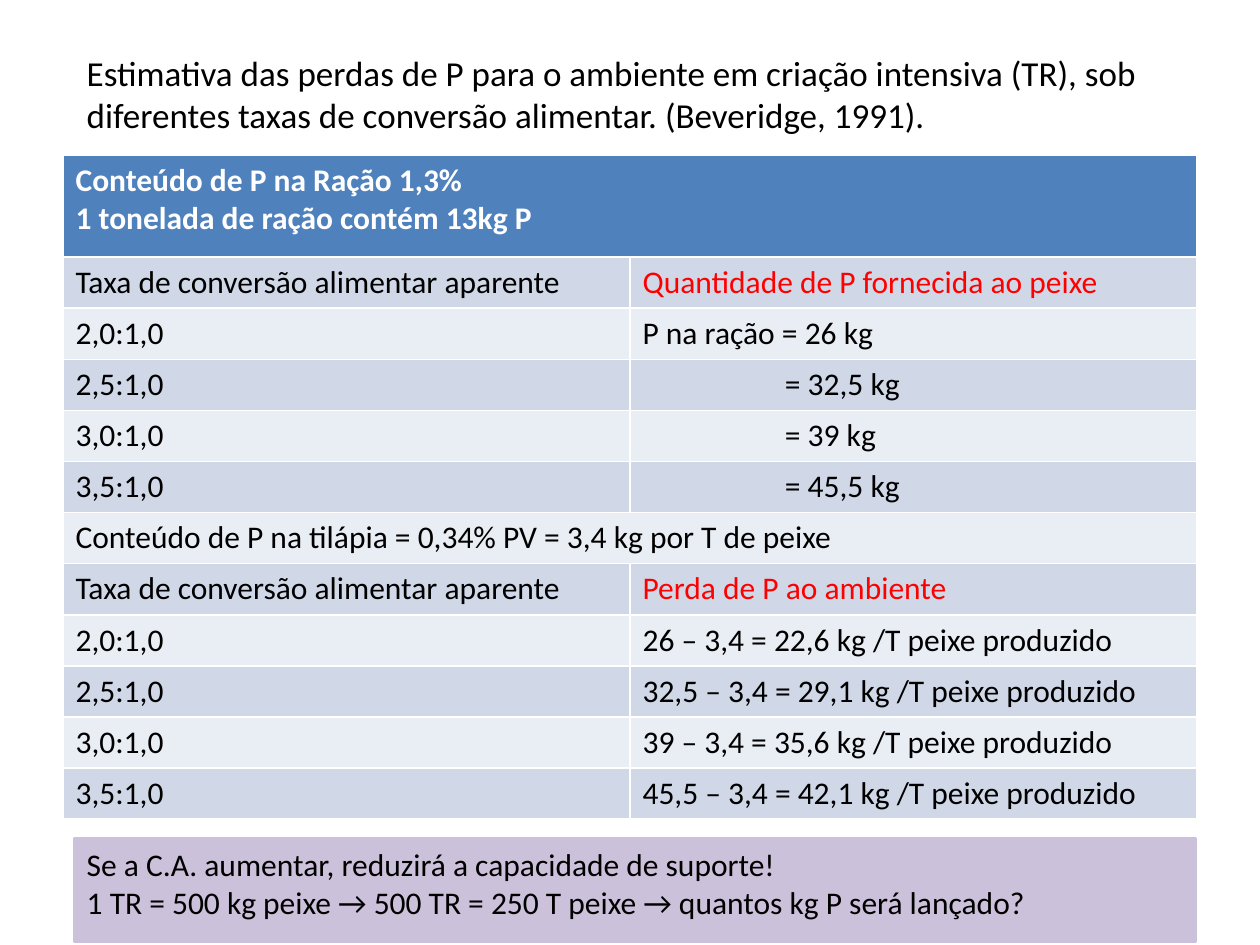
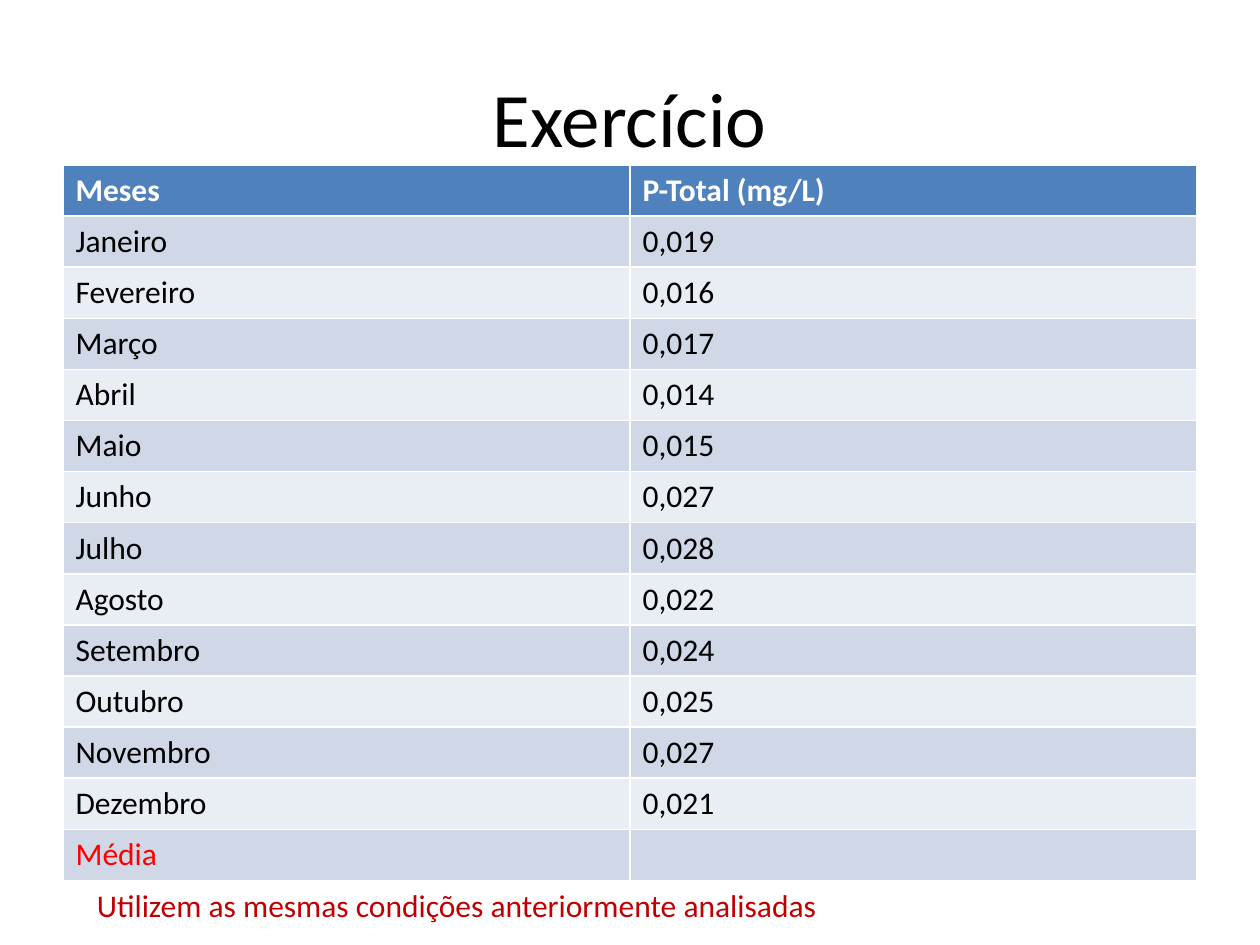
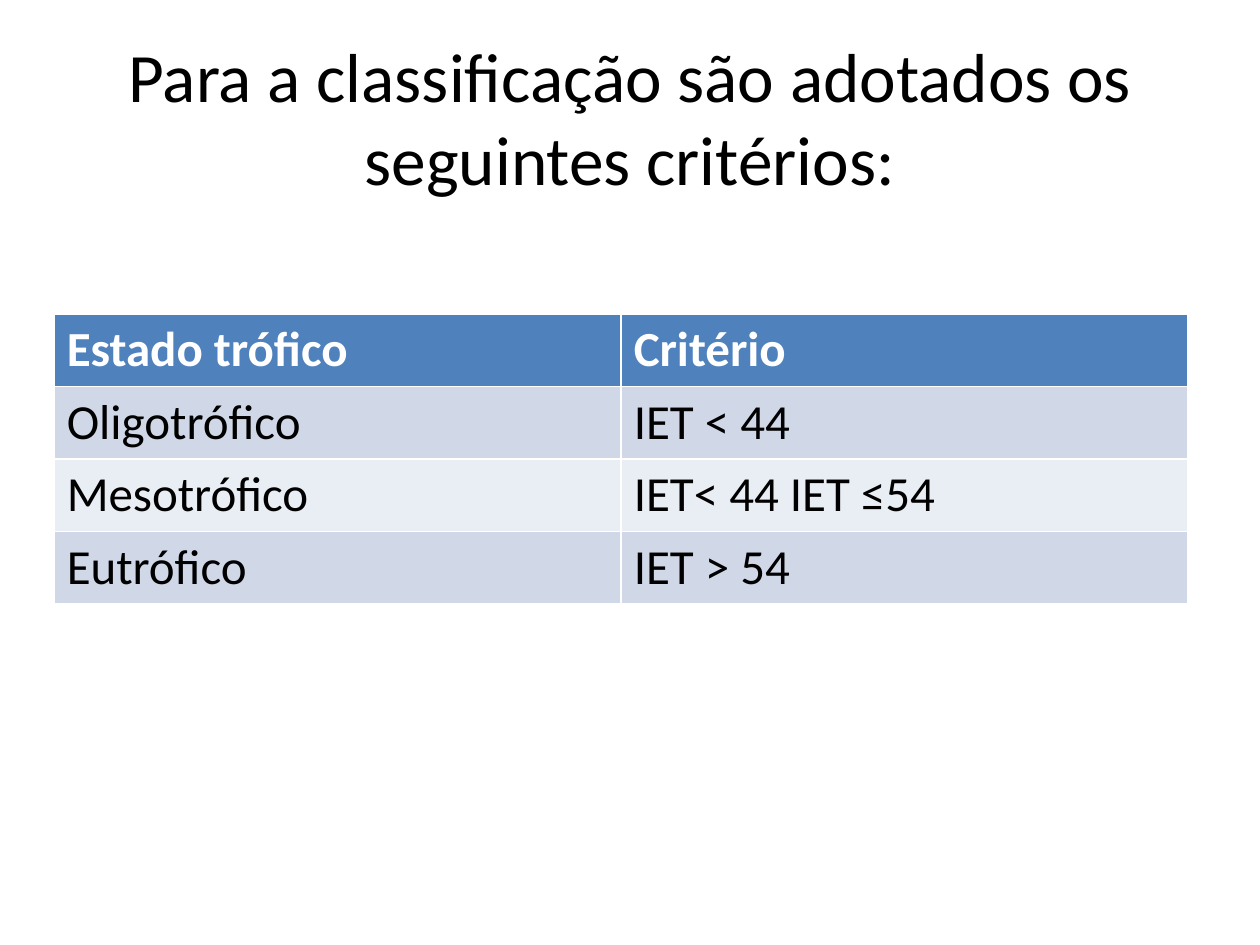
from pptx import Presentation
from pptx.dml.color import RGBColor
from pptx.enum.shapes import MSO_SHAPE
from pptx.enum.text import MSO_ANCHOR, PP_ALIGN
from pptx.util import Inches, Pt

RECTANGLE = MSO_SHAPE.RECTANGLE
TOP, MIDDLE = MSO_ANCHOR.TOP, MSO_ANCHOR.MIDDLE
LEFT, CENTER = PP_ALIGN.LEFT, PP_ALIGN.CENTER

# Shared style
FONT = "Calibri"
BLACK, WHITE, RED, DARK_RED = "000000", "FFFFFF", "FF0000", "C00000"
HEADER, BANDS, LILAC = "4F81BD", ("D0D8E8", "E9EDF4"), "CCC1DA"
TITLE_ONLY, BLANK = 5, 6
SLIDE_W, SLIDE_H = 10, 7.5
TABLE_W = 0.9 * SLIDE_W
TITLE_BOX = (0.5, 0.3, TABLE_W, 1.25)
CELL_MARGIN, EQUALS_INDENT = 0.1, 1.13

# Slide 1: phosphorus losses; a one-item row spans the whole table
LOSSES_INTRO = ("Estimativa das perdas de P para o ambiente em criação intensiva (TR), "
                "sob diferentes taxas de conversão alimentar. (Beveridge, 1991).")
RATE_LABEL = "Taxa de conversão alimentar aparente"
RATES = ("2,0:1,0", "2,5:1,0", "3,0:1,0", "3,5:1,0")
SUPPLIED_LABEL, LOST_LABEL = "Quantidade de P fornecida ao peixe", "Perda de P ao ambiente"
SUPPLIED = ("P na ração = 26 kg", "= 32,5 kg", "= 39 kg", "= 45,5 kg")
LOST = ("26 – 3,4 = 22,6", "32,5 – 3,4 = 29,1", "39 – 3,4 = 35,6", "45,5 – 3,4 = 42,1")
LOSSES = [
    ("Conteúdo de P na Ração 1,3%\n1 tonelada de ração contém 13kg P",),
    (RATE_LABEL, SUPPLIED_LABEL),
    *zip(RATES, SUPPLIED),
    ("Conteúdo de P na tilápia = 0,34% PV = 3,4 kg por T de peixe",),
    (RATE_LABEL, LOST_LABEL),
    *((rate, f"{loss} kg /T peixe produzido") for rate, loss in zip(RATES, LOST)),
]
CAPACITY_NOTE = ("Se a C.A. aumentar, reduzirá a capacidade de suporte!\n"
                 "1 TR = 500 kg peixe → 500 TR = 250 T peixe → quantos kg P será lançado?")

# Slide 2: monthly exercise
EXERCISE_TITLE = "Exercício"
MONTHS = [
    ("Meses", "P-Total (mg/L)"),
    ("Janeiro", "0,019"), ("Fevereiro", "0,016"), ("Março", "0,017"),
    ("Abril", "0,014"), ("Maio", "0,015"), ("Junho", "0,027"),
    ("Julho", "0,028"), ("Agosto", "0,022"), ("Setembro", "0,024"),
    ("Outubro", "0,025"), ("Novembro", "0,027"), ("Dezembro", "0,021"),
    ("Média", ""),
]
EXERCISE_NOTE = "Utilizem as mesmas condições anteriormente analisadas"

# Slide 3: trophic state
CRITERIA_TITLE = "Para a classificação são adotados os seguintes critérios:"
CRITERIA = [
    ("Estado trófico", "Critério"),
    ("Oligotrófico", "IET < 44"),
    ("Mesotrófico", "IET< 44 IET ≤54"),
    ("Eutrófico", "IET > 54"),
]

HIGHLIGHTED = (SUPPLIED_LABEL, LOST_LABEL, "Média")


def rgb(code):
    return RGBColor.from_string(code)


def write(frame, text, size=18, color=BLACK, bold=False, align=LEFT, anchor=TOP):
    """Fill a text frame, one paragraph per line of text."""
    frame.word_wrap = True
    frame.vertical_anchor = anchor
    for i, line in enumerate(text.split("\n")):
        paragraph = frame.add_paragraph() if i else frame.paragraphs[0]
        paragraph.alignment = align
        run = paragraph.add_run()
        run.text = line
        run.font.name, run.font.size, run.font.bold = FONT, Pt(size), bold
        run.font.color.rgb = rgb(color)


def add_title(slide, text, size=44):
    title = slide.shapes.title
    title.left, title.top, title.width, title.height = map(Inches, TITLE_BOX)
    write(title.text_frame, text, size=size, align=CENTER, anchor=MIDDLE)


def add_note(slide, text, box, **style):
    note = slide.shapes.add_textbox(*map(Inches, box))
    write(note.text_frame, text, **style)


def add_panel(slide, box, color):
    panel = slide.shapes.add_shape(RECTANGLE, *map(Inches, box))
    panel.shadow.inherit = False
    panel.fill.solid()
    panel.fill.fore_color.rgb = panel.line.color.rgb = rgb(color)
    panel.line.width = Pt(2)


def add_banded_table(slide, rows, left, top, row_h, header_h=None, size=18):
    """Two equal columns with a header row and alternating bands."""
    header_h = header_h or row_h
    height = header_h + row_h * (len(rows) - 1)
    table = slide.shapes.add_table(
        len(rows), 2, *map(Inches, (left, top, TABLE_W, height))).table
    for r, texts in enumerate(rows):
        table.rows[r].height = Inches(row_h if r else header_h)
        for c in range(2):
            cell = table.cell(r, c)
            cell.fill.solid()
            cell.fill.fore_color.rgb = rgb(BANDS[(r - 1) % 2] if r else HEADER)
        if len(texts) == 1:
            table.cell(r, 0).merge(table.cell(r, 1))
        for c, text in enumerate(texts):
            if not text:
                continue
            cell = table.cell(r, c)
            if text.startswith("="):
                cell.margin_left = Inches(CELL_MARGIN + EQUALS_INDENT)
            color = WHITE if r == 0 else RED if text in HIGHLIGHTED else BLACK
            write(cell.text_frame, text, size=size, color=color, bold=r == 0)


def main():
    deck = Presentation()
    deck.slide_width, deck.slide_height = Inches(SLIDE_W), Inches(SLIDE_H)

    def new_slide(layout):
        return deck.slides.add_slide(deck.slide_layouts[layout])

    # Phosphorus losses
    losses = new_slide(BLANK)
    add_panel(losses, (0.59, 6.66, 8.9, 0.81), LILAC)
    add_banded_table(losses, LOSSES, 0.5, 1.23, 5.27 / 13, header_h=2 * 5.27 / 13)
    add_note(losses, LOSSES_INTRO, (0.59, 0.36, 8.9, 0.77), size=20)
    add_note(losses, CAPACITY_NOTE, (0.59, 6.66, 8.9, 0.71))

    # Monthly exercise
    exercise = new_slide(TITLE_ONLY)
    add_title(exercise, EXERCISE_TITLE)
    add_banded_table(exercise, MONTHS, 0.5, 1.31, 5.68 / len(MONTHS))
    add_note(exercise, EXERCISE_NOTE, (0.67, 6.98, 8.82, 0.4), color=DARK_RED)

    # Trophic state criteria
    criteria = new_slide(TITLE_ONLY)
    add_title(criteria, CRITERIA_TITLE, size=39.6)
    add_banded_table(criteria, CRITERIA, 0.43, 2.49, 2.27 / len(CRITERIA), size=28)

    deck.save("out.pptx")


if __name__ == "__main__":
    main()
